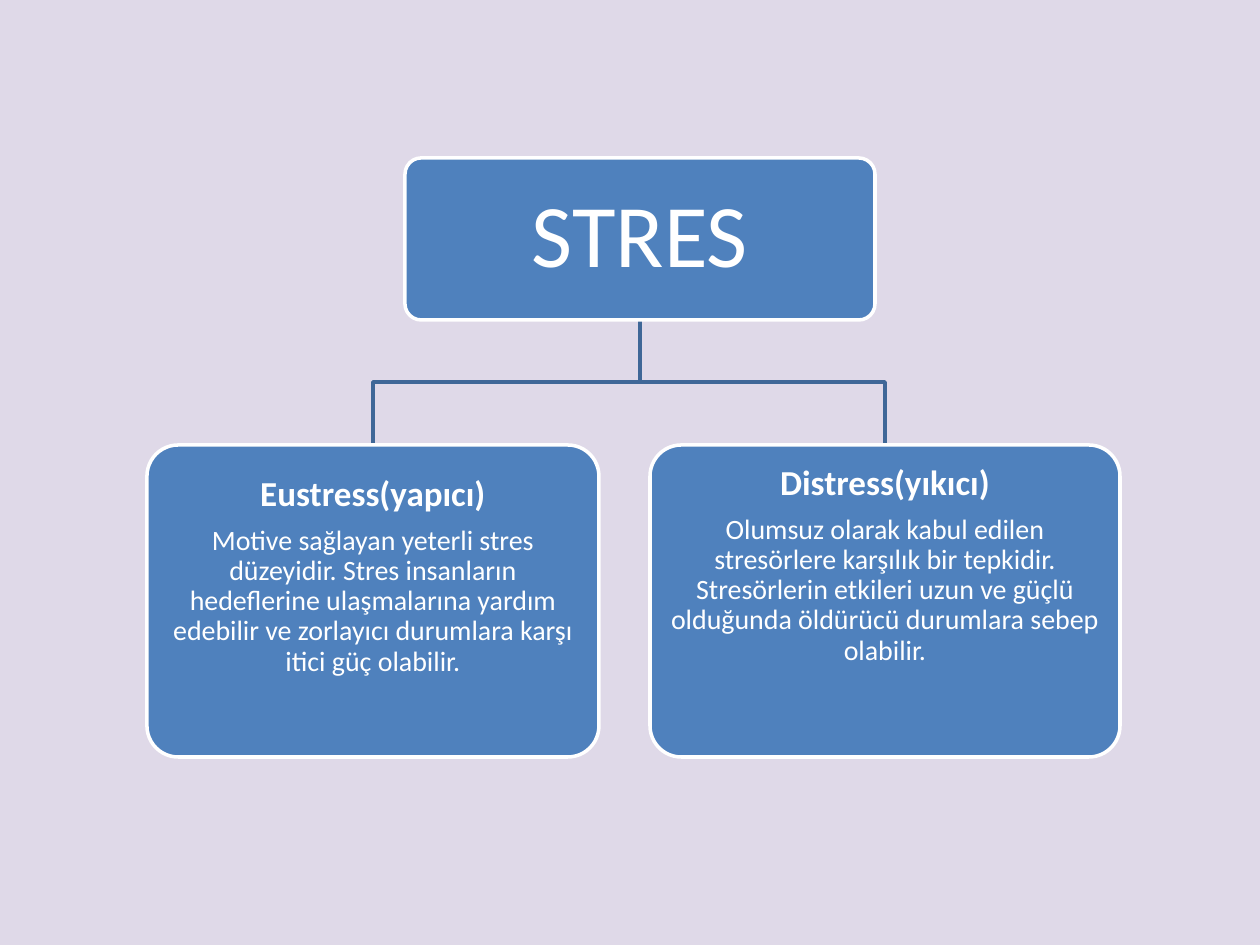
import dataclasses

import pptx
import pptx.dml.color
import pptx.enum.shapes
import pptx.enum.text
import pptx.util

SCALE = 914400 / 126
FONT = "Calibri"
LILAC = pptx.dml.color.RGBColor(0xDF, 0xD9, 0xE8)
BLUE = pptx.dml.color.RGBColor(0x4F, 0x81, 0xBD)
NAVY = pptx.dml.color.RGBColor(0x3F, 0x67, 0x97)
WHITE = pptx.dml.color.RGBColor(0xFF, 0xFF, 0xFF)
TOP = pptx.enum.text.MSO_ANCHOR.TOP
MIDDLE = pptx.enum.text.MSO_ANCHOR.MIDDLE


@dataclasses.dataclass(frozen=True)
class Line:
    text: str
    size: int
    bold: bool = False


@dataclasses.dataclass(frozen=True)
class Card:
    left: int
    top: int
    width: int
    height: int
    lines: tuple[Line, ...]
    anchor: pptx.enum.text.MSO_ANCHOR = TOP
    inset: int = 10

    @property
    def center(self) -> int:
        return self.left + self.width // 2


ROOT = Card(405, 158, 470, 162, (Line("STRES", 51),), MIDDLE)
LEAVES = (
    Card(147, 445, 452, 312, (
        Line("Eustress(yapıcı)", 20, True),
        Line("Motive sağlayan yeterli stres düzeyidir. Stres insanların "
             "hedeflerine ulaşmalarına yardım edebilir ve zorlayıcı "
             "durumlara karşı itici güç olabilir.", 16),
    ), inset=22),
    Card(650, 445, 470, 312, (
        Line("Distress(yıkıcı)", 20, True),
        Line("Olumsuz olarak kabul edilen stresörlere karşılık bir tepkidir. "
             "Stresörlerin etkileri uzun ve güçlü olduğunda öldürücü "
             "durumlara sebep olabilir.", 16),
    ), inset=11),
)


def px(value: int) -> pptx.util.Emu:
    return pptx.util.Emu(round(value * SCALE))


def draw_link(slide, root: Card, leaf: Card) -> None:
    base = root.top + root.height
    bend = (base + leaf.top) // 2
    path = slide.shapes.build_freeform(root.center, base, scale=SCALE)
    path.add_line_segments(
        [(root.center, bend), (leaf.center, bend), (leaf.center, leaf.top)],
        close=False)
    link = path.convert_to_shape()
    link.shadow.inherit = False
    link.fill.background()
    link.line.color.rgb = NAVY
    link.line.width = pptx.util.Pt(2)


def draw_card(slide, card: Card) -> None:
    shape = slide.shapes.add_shape(
        pptx.enum.shapes.MSO_SHAPE.ROUNDED_RECTANGLE,
        px(card.left), px(card.top), px(card.width), px(card.height))
    shape.adjustments[0] = 0.1
    shape.shadow.inherit = False
    shape.fill.solid()
    shape.fill.fore_color.rgb = BLUE
    shape.line.color.rgb = WHITE
    shape.line.width = pptx.util.Pt(2)
    frame = shape.text_frame
    frame.word_wrap = True
    frame.vertical_anchor = card.anchor
    frame.margin_left = frame.margin_right = px(10)
    frame.margin_top = frame.margin_bottom = px(card.inset)
    for index, line in enumerate(card.lines):
        para = frame.add_paragraph() if index else frame.paragraphs[0]
        para.alignment = pptx.enum.text.PP_ALIGN.CENTER
        para.line_spacing = 0.9
        para.space_before = pptx.util.Pt(7 if index else 0)
        run = para.add_run()
        run.text = line.text
        run.font.name = FONT
        run.font.size = pptx.util.Pt(line.size)
        run.font.bold = line.bold
        run.font.color.rgb = WHITE


def main() -> None:
    deck = pptx.Presentation()
    deck.slide_width = px(1260)
    deck.slide_height = px(945)
    slide = deck.slides.add_slide(deck.slide_layouts[6])
    slide.background.fill.solid()
    slide.background.fill.fore_color.rgb = LILAC
    for leaf in LEAVES:
        draw_link(slide, ROOT, leaf)
    for card in (ROOT, *LEAVES):
        draw_card(slide, card)
    deck.save("out.pptx")


if __name__ == "__main__":
    main()
